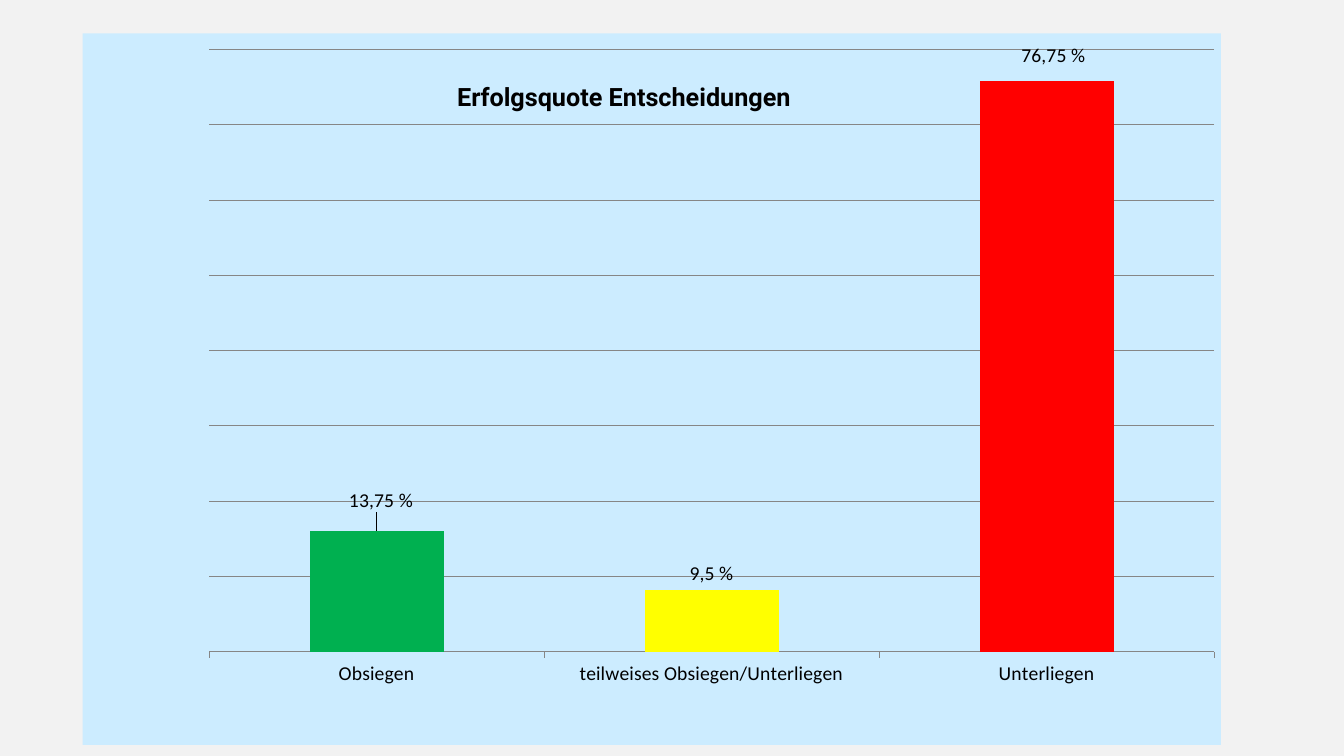
from pptx import Presentation
from pptx.chart.data import CategoryChartData
from pptx.dml.color import RGBColor
from pptx.enum.chart import XL_CHART_TYPE as ChartType, XL_LABEL_POSITION as LabelPos
from pptx.enum.chart import XL_TICK_LABEL_POSITION as TickLabels, XL_TICK_MARK as Tick
from pptx.oxml import parse_xml
from pptx.oxml.ns import nsdecls, qn
from pptx.util import Inches, Pt

BLACK = RGBColor(0x00, 0x00, 0x00)
GREY = RGBColor(0x86, 0x86, 0x86)
BACKGROUND = RGBColor(0xF2, 0xF2, 0xF2)
PALE_BLUE = RGBColor(0xCC, 0xEC, 0xFF)
GREEN = RGBColor(0x00, 0xB0, 0x50)
YELLOW = RGBColor(0xFF, 0xFF, 0x00)
RED = RGBColor(0xFF, 0x00, 0x00)

TITLE = "Erfolgsquote Entscheidungen"
# category, value, label, colour, label shift as shares of the chart
OUTCOMES = [
    ("Obsiegen", 0.1605, "13,75 %", GREEN, (0.004, -0.02)),
    ("teilweises Obsiegen/Unterliegen", 0.0815, "9,5 %", YELLOW, None),
    ("Unterliegen", 0.7579, "76,75 %", RED, (0.006, -0.013)),
]
CHART_BOX = (0.82, 0.33, 11.29, 7.06)
PLOT_AREA = (0.111, 0.023, 0.883, 0.846)
TITLE_PLACE = (0.325, 0.06)


def write(tf, text, size, font="Calibri", bold=False, color=BLACK):
    r = tf.paragraphs[0].add_run()
    r.text = text
    r.font.size, r.font.name, r.font.bold = Pt(size), font, bold
    r.font.color.rgb = color


def layout(shares, edge=False, inner=False):
    """Manual chart layout from shares of the chart: x, y and optionally w, h."""
    parts = '<c:layoutTarget val="inner"/>' if inner else ""
    if edge:
        parts += '<c:xMode val="edge"/><c:yMode val="edge"/>'
    parts += "".join(f'<c:{k} val="{v}"/>' for k, v in zip("xywh", shares))
    return parse_xml(f'<c:layout {nsdecls("c")}><c:manualLayout>{parts}'
                     '</c:manualLayout></c:layout>')


def drop_layout(element):
    for old in element.findall(qn("c:layout")):
        element.remove(old)


def style_title(chart):
    chart.has_title = True
    title = chart.chart_title
    write(title.text_frame, TITLE, 18, font="Roboto", bold=True)
    el = title._element
    drop_layout(el)
    el.find(qn("c:tx")).addnext(layout(TITLE_PLACE, edge=True))
    el.find(qn("c:overlay")).set("val", "1")


def style_axes(chart):
    cat, val = chart.category_axis, chart.value_axis
    cat.major_tick_mark = Tick.OUTSIDE
    cat.tick_labels.font.size = Pt(14)
    val.minimum_scale, val.maximum_scale, val.major_unit = 0, 0.8, 0.1
    val.has_major_gridlines = True
    val.tick_label_position = TickLabels.NEXT_TO_AXIS
    val.tick_labels.number_format = "0.00%"
    val.tick_labels.number_format_is_linked = False
    val.visible = False
    for line in (cat.format.line, val.major_gridlines.format.line):
        line.color.rgb = GREY
        line.width = Pt(0.75)


def style_bars(chart):
    plot = chart.plots[0]
    plot.gap_width, plot.vary_by_categories = 150, False
    series = plot.series[0]
    series.format.fill.solid()
    series.format.fill.fore_color.rgb = GREEN
    labels = series.data_labels
    labels.show_value = True
    labels.number_format, labels.number_format_is_linked = "0.00%", False
    labels.position = LabelPos.OUTSIDE_END
    labels.font.size = Pt(14)
    for i, (_, _, text, color, shift) in enumerate(OUTCOMES):
        point = series.points[i]
        point.format.fill.solid()
        point.format.fill.fore_color.rgb = color
        label = point.data_label
        write(label.text_frame, text, 14)
        label.position = LabelPos.OUTSIDE_END
        if shift:
            idx = label.text_frame._element.getparent().getparent().find(qn("c:idx"))
            idx.addnext(layout(shift))


def style_areas(chart):
    chart.font.size, chart.font.name = Pt(10), "Calibri"
    chart.font.color.rgb = BLACK
    space = chart._chartSpace
    space.find(qn("c:txPr")).addprevious(parse_xml(
        f'<c:spPr {nsdecls("c", "a")}><a:solidFill><a:srgbClr val="{PALE_BLUE}"/>'
        '</a:solidFill><a:ln><a:noFill/></a:ln></c:spPr>'))
    plot_area = space.find(qn("c:chart")).find(qn("c:plotArea"))
    drop_layout(plot_area)
    plot_area.insert(0, layout(PLOT_AREA, edge=True, inner=True))


def main():
    prs = Presentation()
    prs.slide_width, prs.slide_height = Inches(13.33), Inches(7.5)
    s = prs.slides.add_slide(prs.slide_layouts[6])
    s.background.fill.solid()
    s.background.fill.fore_color.rgb = BACKGROUND

    data = CategoryChartData(number_format="0.00%")
    data.categories = [o[0] for o in OUTCOMES]
    data.add_series("Series 1", [o[1] for o in OUTCOMES])
    chart = s.shapes.add_chart(ChartType.COLUMN_CLUSTERED,
                               *map(Inches, CHART_BOX), data).chart
    chart.has_legend = False
    for style in (style_areas, style_title, style_axes, style_bars):
        style(chart)
    prs.save("out.pptx")


if __name__ == "__main__":
    main()
